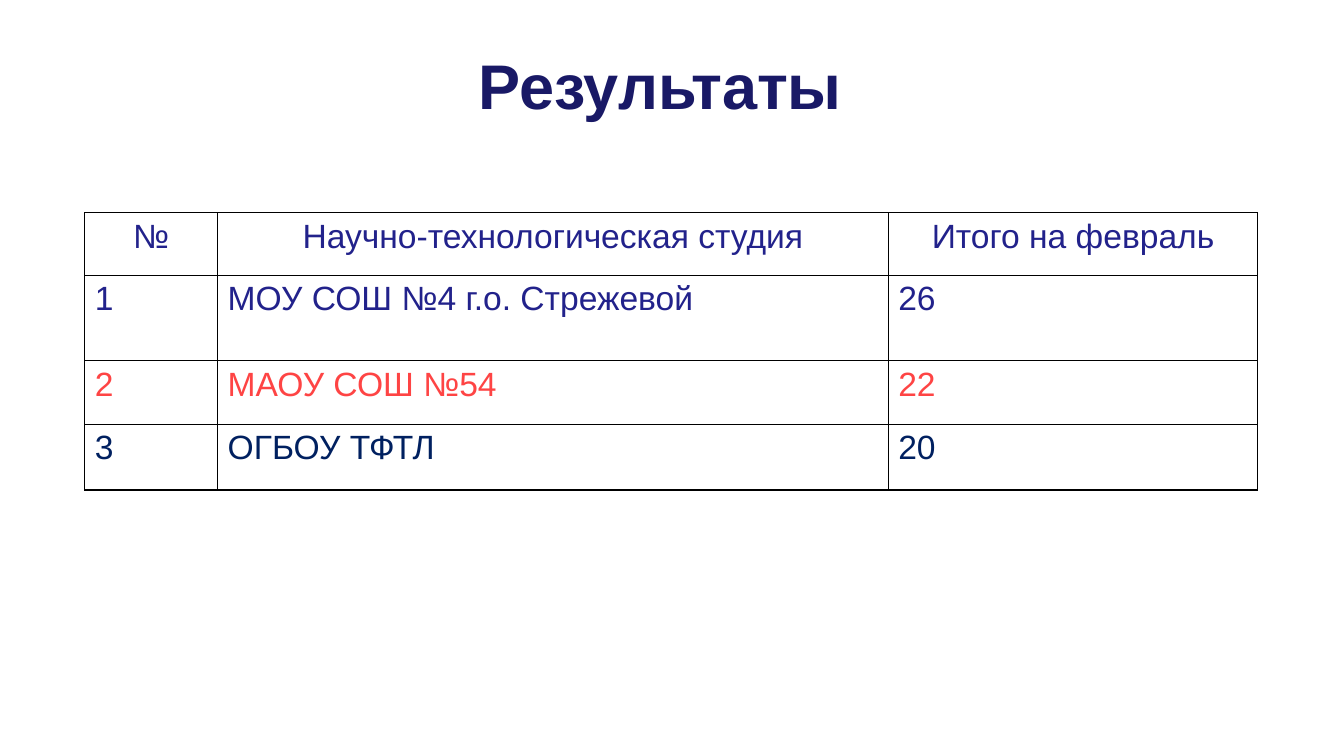
"""Build the results slide with a title and a bordered table."""
from dataclasses import dataclass

from lxml import etree
from pptx import Presentation
from pptx import util as u
from pptx.dml.color import RGBColor
from pptx.enum import text
from pptx.oxml import ns

COLORS = {
    "title": "191966",
    "indigo": "22228B",
    "red": "FE4444",
    "navy": "002060",
    "border": "000000",
}
FONT = "Arial"
COLUMN_WIDTHS = (95, 479, 264)


@dataclass(frozen=True)
class ResultRow:
    """One table row with its height and text format."""

    texts: tuple[str, str, str]
    height: float
    color: str = "indigo"
    align: text.PP_ALIGN = text.PP_ALIGN.LEFT


ROWS = (
    ResultRow(("№", "Научно-технологическая студия", "Итого на февраль"), 44.6,
              align=text.PP_ALIGN.CENTER),
    ResultRow(("1", "МОУ СОШ №4 г.о. Стрежевой", "26"), 61),
    ResultRow(("2", "МАОУ СОШ №54", "22"), 45.6, "red"),
    ResultRow(("3", "ОГБОУ ТФТЛ", "20"), 46.8, "navy"),
)


def write_text(frame, content: str, *, size: float, color: str,
               align: text.PP_ALIGN, bold: bool = False,
               line_spacing: float = 1.0) -> None:
    """Write one formatted paragraph into a text frame."""
    paragraph = frame.paragraphs[0]
    paragraph.alignment = align
    paragraph.line_spacing = line_spacing
    run = paragraph.add_run()
    run.text = content
    run.font.name = FONT
    run.font.size = u.Pt(size)
    run.font.bold = bold
    run.font.color.rgb = RGBColor.from_string(COLORS[color])


def set_borders(cell, color: str, width: float = 1) -> None:
    """Draw a solid line on all four sides of a cell."""
    properties = cell._tc.get_or_add_tcPr()
    for index, side in enumerate(("lnL", "lnR", "lnT", "lnB")):
        line = etree.Element(ns.qn(f"a:{side}"), w=str(int(u.Pt(width))))
        fill = etree.SubElement(line, ns.qn("a:solidFill"))
        etree.SubElement(fill, ns.qn("a:srgbClr"), val=COLORS[color])
        properties.insert(index, line)


def add_title(slide, content: str) -> None:
    """Place and fill the title placeholder."""
    title = slide.shapes.title
    title.left, title.top = u.Pt(39.6), u.Pt(24.5)
    title.width, title.height = u.Pt(864), u.Pt(77.8)
    frame = title.text_frame
    frame.word_wrap = True
    frame.auto_size = text.MSO_AUTO_SIZE.NONE
    frame.vertical_anchor = text.MSO_ANCHOR.MIDDLE
    frame.margin_left = frame.margin_right = u.Pt(0)
    frame.margin_top = frame.margin_bottom = u.Pt(0)
    write_text(frame, content, size=45, color="title", bold=True,
               align=text.PP_ALIGN.CENTER, line_spacing=0.93)


def add_results(slide, rows: tuple[ResultRow, ...]) -> None:
    """Add the results table."""
    height = sum(row.height for row in rows)
    table = slide.shapes.add_table(
        len(rows), len(COLUMN_WIDTHS), u.Pt(60.5), u.Pt(152),
        u.Pt(sum(COLUMN_WIDTHS)), u.Pt(height)).table
    table.first_row = table.horz_banding = False
    for column, width in zip(table.columns, COLUMN_WIDTHS):
        column.width = u.Pt(width)
    for table_row, row in zip(table.rows, rows):
        table_row.height = u.Pt(row.height)
        for cell, content in zip(table_row.cells, row.texts):
            cell.fill.background()
            set_borders(cell, "border")
            write_text(cell.text_frame, content, size=24, color=row.color,
                       align=row.align)


def main() -> None:
    """Create and save the presentation."""
    presentation = Presentation()
    presentation.slide_width, presentation.slide_height = u.Pt(960), u.Pt(540)
    slide = presentation.slides.add_slide(presentation.slide_layouts[5])
    add_results(slide, ROWS)
    add_title(slide, "Результаты")
    presentation.save("out.pptx")


if __name__ == "__main__":
    main()
